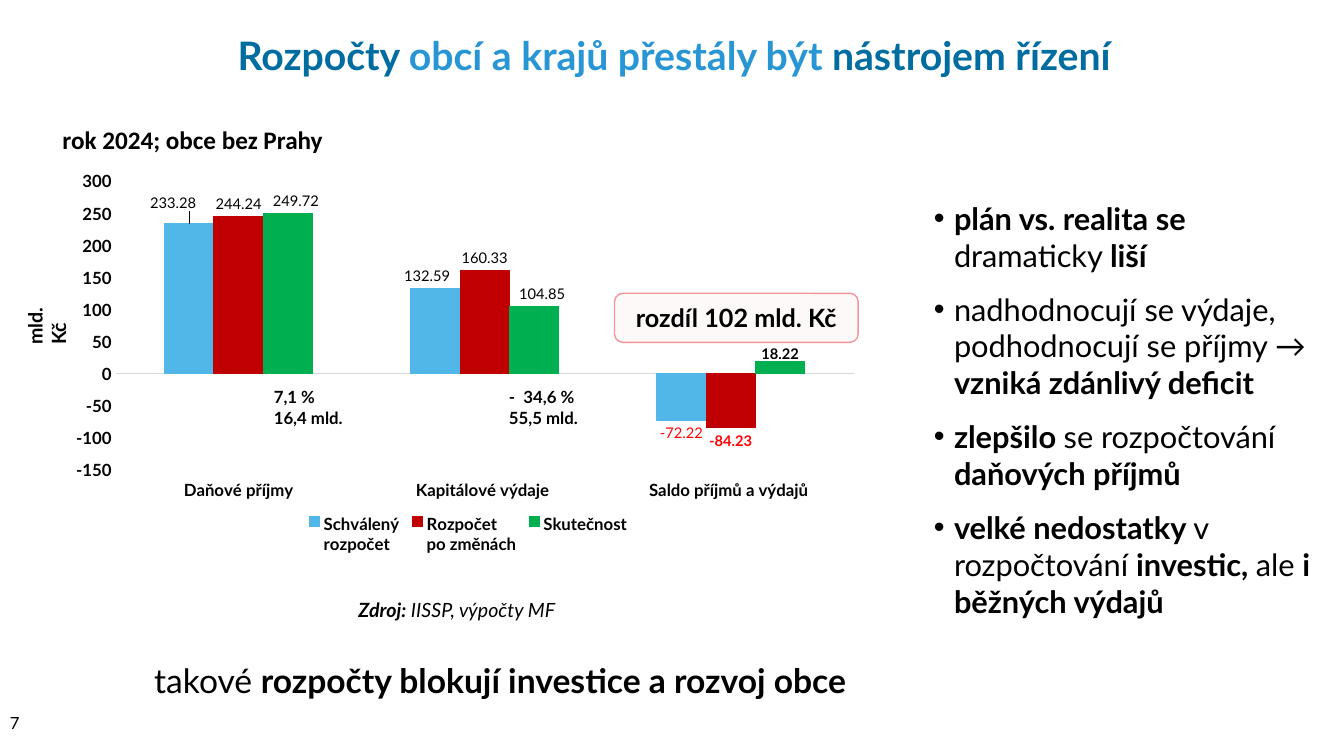
from lxml import etree
from pptx import Presentation
from pptx import util as u
from pptx.chart.data import CategoryChartData
from pptx.dml.color import RGBColor
from pptx.enum import chart as kinds, shapes, text
from pptx.oxml import parse_xml
from pptx.oxml.ns import nsdecls, qn

COLORS = {
    "black": "000000", "navy": "006DA1", "sky": "2896D4", "red": "FF0000",
    "axis": "D9D9D9", "approved": "51B7E9", "amended": "C00000",
    "actual": "00B050", "callout": "F6B7BB", "callout_edge": "F29499",
}
CATEGORIES = ["Daňové příjmy", "Kapitálové výdaje ", "Saldo příjmů a výdajů "]
SERIES = [
    ("Schválený\nrozpočet\n", (233.28, 132.59, -72.22), "approved"),
    ("Rozpočet\npo změnách\n", (244.24, 160.33, -84.23), "amended"),
    ("Skutečnost\n", (249.72, 104.85, 18.22), "actual"),
]
LABELS = [
    (0, 0, "black", False, (-0.02, -0.02)),
    (0, 1, "black", False, (-0.01, 0)),
    (0, 2, "red", False, (0, 0)),
    (1, 2, "red", True, (0, 0)),
    (2, 0, "black", False, (0.01, 0)),
    (2, 1, "black", False, (0.01, 0)),
    (2, 2, "black", True, (0, 0.01)),
]
BULLETS = [
    [("plán vs. realita se ", True), ("dramaticky ", False), ("liší", True)],
    [("nadhodnocují se výdaje, podhodnocují se příjmy → ", False),
     ("vzniká zdánlivý deficit", True)],
    [("zlepšilo ", True), ("se rozpočtování ", False), ("daňových příjmů", True)],
    [("velké nedostatky ", True), ("v rozpočtování ", False), ("investic, ", True),
     ("ale ", False), ("i běžných výdajů", True)],
]


def color(name):
    return RGBColor.from_string(COLORS[name])


def style_font(font, size, bold=False, tint="black", name="Lato", italic=False):
    font.name = name
    font.size = u.Pt(size)
    font.bold = bold
    font.italic = italic
    font.color.rgb = color(tint)


def add_spans(para, spans, size, **style):
    for content, bold in spans:
        span = para.add_run()
        span.text = content
        style_font(span.font, size, bold, **style)


def add_text(page, place, paragraphs, size, wrap=False, **style):
    box = page.shapes.add_textbox(*map(u.Pt, place))
    frame = box.text_frame
    frame.word_wrap = wrap
    frame.auto_size = text.MSO_AUTO_SIZE.NONE if wrap else text.MSO_AUTO_SIZE.SHAPE_TO_FIT_TEXT
    for number, spans in enumerate(paragraphs):
        para = frame.add_paragraph() if number else frame.paragraphs[0]
        add_spans(para, spans, size, **style)
    return box


def add_title(page):
    title = page.shapes.title
    title.left, title.top, title.width, title.height = map(u.Pt, (28, 0, 907, 78))
    title.text_frame.vertical_anchor = text.MSO_ANCHOR.MIDDLE
    para = title.text_frame.paragraphs[0]
    para.alignment = text.PP_ALIGN.CENTER
    for content, tint in [("Rozpočty ", "navy"), ("obcí a krajů přestály být ", "sky"),
                          ("nástrojem řízení", "navy")]:
        add_spans(para, [(content, True)], 28, tint=tint)


def add_bullets(page):
    box = add_text(page, (660, 139, 294, 310), BULLETS, 22, wrap=True)
    for para in box.text_frame.paragraphs:
        para.space_after = u.Pt(12)
        props = para._p.get_or_add_pPr()
        props.set("marL", str(u.Pt(14.4)))
        props.set("indent", str(u.Pt(-14.4)))
        etree.SubElement(props, qn("a:buFont")).set("typeface", "Arial")
        etree.SubElement(props, qn("a:buChar")).set("char", "•")


def manual_layout(**values):
    parts = "".join(f'<c:{key} val="{value}"/>' for key, value in values.items())
    return parse_xml(f'<c:layout {nsdecls("c")}><c:manualLayout>{parts}'
                     '</c:manualLayout></c:layout>')


def style_axes(chart):
    for axis in (chart.category_axis, chart.value_axis):
        axis.has_major_gridlines = False
        axis.major_tick_mark = kinds.XL_TICK_MARK.NONE
        axis.minor_tick_mark = kinds.XL_TICK_MARK.NONE
        style_font(axis.tick_labels.font, 12, True)
    categories, values = chart.category_axis, chart.value_axis
    categories.tick_label_position = kinds.XL_TICK_LABEL_POSITION.LOW
    categories.format.line.color.rgb = color("axis")
    categories.format.line.width = u.Pt(0.75)
    values.minimum_scale, values.maximum_scale, values.major_unit = -150, 300, 50
    values.tick_labels.number_format = "#,##0"
    values.tick_labels.number_format_is_linked = False
    values.format.line.fill.background()


def style_series(series, tint):
    series.invert_if_negative = False
    series.format.fill.solid()
    series.format.fill.fore_color.rgb = color(tint)
    series.format.line.color.rgb = color(tint)
    series.format.line.width = u.Pt(0.75)
    labels = series.data_labels
    labels.show_value = True
    labels.number_format = "#,##0.00"
    labels.number_format_is_linked = False
    labels.position = kinds.XL_LABEL_POSITION.OUTSIDE_END
    style_font(labels.font, 10.5)


def style_label(series, point, tint, bold, shift):
    label = series.points[point].data_label
    style_font(label.font, 10.5, bold, tint)
    label.position = kinds.XL_LABEL_POSITION.OUTSIDE_END
    if any(shift):
        element = series.data_labels._element.find(f"{qn('c:dLbl')}[{qn('c:idx')}][@val]")
        for element in series.data_labels._element.findall(qn("c:dLbl")):
            index = element.find(qn("c:idx"))
            if index.get("val") == str(point):
                index.addnext(manual_layout(x=shift[0], y=shift[1]))


def add_budget_chart(page):
    data = CategoryChartData(number_format="#,##0.00")
    data.categories = CATEGORIES
    for name, values, _ in SERIES:
        data.add_series(name, values)
    chart = page.shapes.add_chart(kinds.XL_CHART_TYPE.COLUMN_CLUSTERED,
                                  *map(u.Pt, (42, 114.5, 579.5, 299)), data).chart
    style_font(chart.font, 10)
    chart.has_title = False
    chart.has_legend = True
    chart.legend.position = kinds.XL_LEGEND_POSITION.BOTTOM
    chart.legend.include_in_layout = False
    style_font(chart.legend.font, 12, True)
    style_axes(chart)
    plot = chart.plots[0]
    plot.gap_width, plot.overlap, plot.vary_by_categories = 199, 0, False
    for series, (_, _, tint) in zip(plot.series, SERIES):
        style_series(series, tint)
    for number, *style in LABELS:
        style_label(plot.series[number], *style)
    area = chart._chartSpace.chart.plotArea
    for old in area.findall(qn("c:layout")):
        area.remove(old)
    area.insert(0, manual_layout(layoutTarget="inner", xMode="edge", yMode="edge",
                                 x=0.07, y=0.05, w=0.91, h=0.69))
    legend = chart.legend._element
    for old in legend.findall(qn("c:layout")):
        legend.remove(old)
    legend.find(qn("c:legendPos")).addnext(
        manual_layout(xMode="edge", yMode="edge", x=0.3, y=0.84, w=0.41, h=0.16))


def add_callout(page):
    box = page.shapes.add_shape(shapes.MSO_SHAPE.ROUNDED_RECTANGLE,
                                *map(u.Pt, (439, 209.5, 174, 35)))
    box.shadow.inherit = False
    box.fill.solid()
    box.fill.fore_color.rgb = color("callout")
    tint = box.fill._xPr.find(f".//{qn('a:srgbClr')}")
    etree.SubElement(tint, qn("a:alpha")).set("val", "8000")
    box.line.color.rgb = color("callout_edge")
    box.line.width = u.Pt(1)
    frame = box.text_frame
    frame.word_wrap = True
    frame.vertical_anchor = text.MSO_ANCHOR.MIDDLE
    frame.paragraphs[0].alignment = text.PP_ALIGN.CENTER
    add_spans(frame.paragraphs[0], [("rozdíl 102 mld. Kč", True)], 18)


def main():
    deck = Presentation()
    deck.slide_width, deck.slide_height = u.Pt(960), u.Pt(540)
    page = deck.slides.add_slide(deck.slide_layouts[5])
    add_title(page)
    number = add_text(page, (0, 500.5, 34.5, 31), [[("7", False)]], 12, wrap=True)
    number.text_frame.vertical_anchor = text.MSO_ANCHOR.MIDDLE
    add_bullets(page)
    add_text(page, (37.5, 85.5, 202, 29), [[("rok 2024; obce bez Prahy", True)]], 18, name="Calibri")
    unit = add_text(page, (-3.6, 212.4, 57.6, 24.5), [[("mld. Kč", True)]], 14, wrap=True)
    unit.rotation = 270
    add_text(page, (249, 423.5, 160, 24.5),
             [[("Zdroj: ", True), ("IISSP, výpočty MF", False)]], 14, italic=True)
    add_budget_chart(page)
    for left, share, amount in [(188.5, "7,1 %", "16,4 mld."), (356.5, "-  34,6 %", "55,5 mld.")]:
        add_text(page, (left, 273, 67, 36), [[(share, True)], [(amount, True)]], 12)
    add_callout(page)
    add_text(page, (103, 467.5, 541, 36),
             [[("takové ", False), ("rozpočty blokují investice a rozvoj obce", True)]], 24)
    deck.save("out.pptx")


if __name__ == "__main__":
    main()
